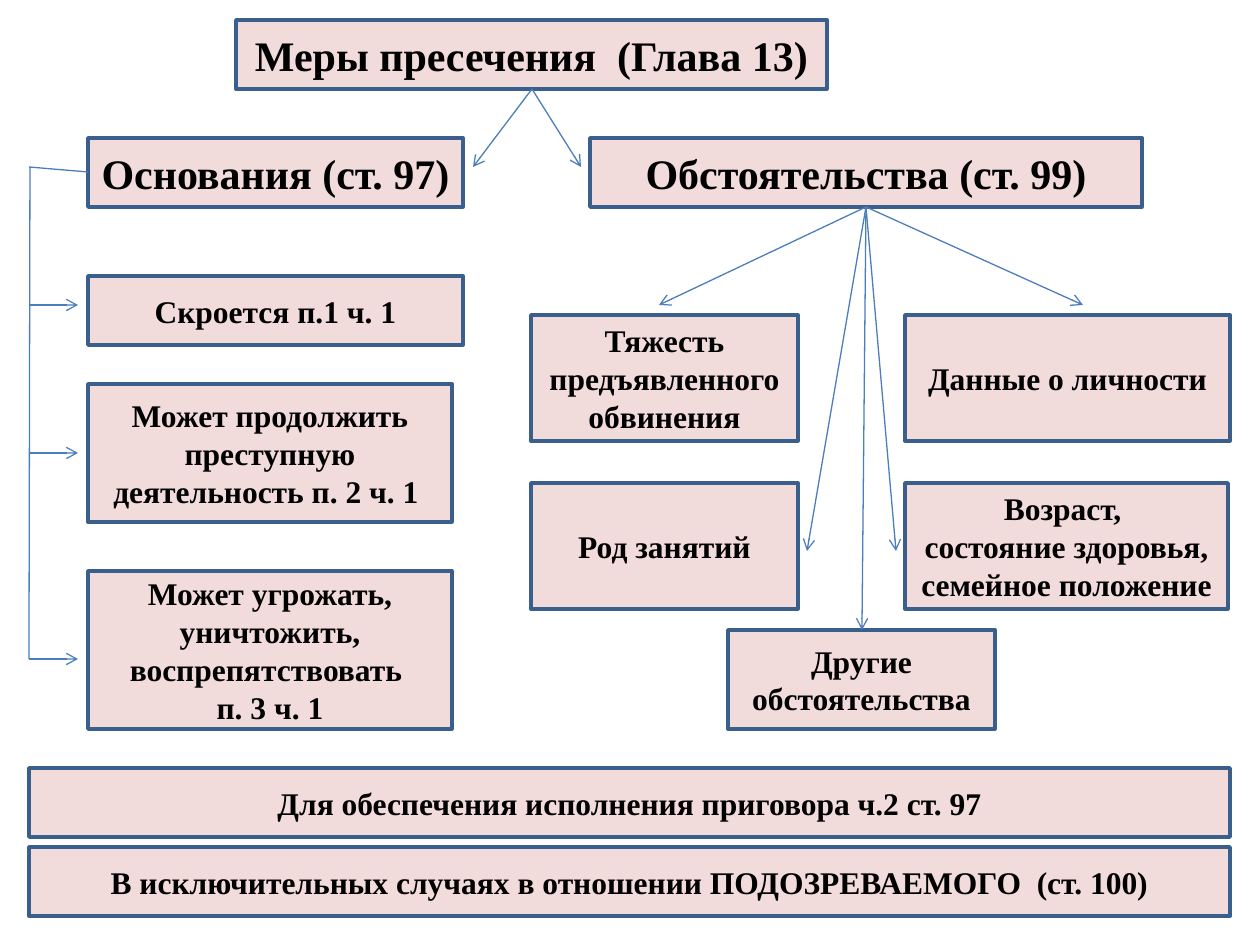
"""Build a one-slide chart of preventive measures."""
from dataclasses import dataclass

from pptx import Presentation, util as u
from pptx.dml.color import RGBColor
from pptx.enum import shapes, text
from pptx.oxml import parse_xml
from pptx.oxml.ns import nsdecls, qn

SCALE = 914400 / 126
COLORS = {"fill": "F2DCDB", "edge": "3A5F8C", "link": "4B7EBC", "ink": "000000"}
FONT = {"name": "Times New Roman", "bold": True}
FRAME = {"word_wrap": True, "auto_size": text.MSO_AUTO_SIZE.NONE,
         "vertical_anchor": text.MSO_ANCHOR.MIDDLE}


@dataclass
class Box:
    words: str
    left: int
    top: int
    width: int
    height: int = 69
    size: int = 18


@dataclass
class Link:
    x1: int
    y1: int
    x2: int
    y2: int
    arrow: bool = True


TITLE = Box("Меры пресечения  (Глава 13)", 236, 20, 591, size=24)
BOXES = [
    Box("Основания (ст. 97)", 88, 138, 375, size=24),
    Box("Обстоятельства (ст. 99)", 590, 138, 552, size=24),
    Box("Скроется п.1 ч. 1", 88, 276, 375),
    Box("Может продолжить преступную деятельность п. 2 ч. 1 ", 88, 384, 364, 138),
    Box("Может угрожать, уничтожить, воспрепятствовать \nп. 3 ч. 1", 88, 571, 364, 158),
    Box("Тяжесть предъявленного обвинения", 531, 315, 267, 126),
    Box("Данные о личности", 905, 315, 325, 126),
    Box("Род занятий", 531, 483, 267, 126),
    Box("Возраст, \nсостояние здоровья,\nсемейное положение", 905, 483, 323, 126),
    Box("Другие обстоятельства", 728, 630, 267, 99),
    Box("Для обеспечения исполнения приговора ч.2 ст. 97", 29, 768, 1201),
    Box("В исключительных случаях в отношении ПОДОЗРЕВАЕМОГО  (ст. 100)", 29, 847, 1201),
]
HEADS = [(581, 167), (473, 167)]
FACTS = [(659, 305), (807, 551), (1083, 305), (896, 551), (862, 630)]
ROWS = [305, 453, 659]
LINKS = [
    *(Link(532, 89, x, y) for x, y in HEADS),
    Link(30, 167, 29, 659, False),
    Link(29, 167, 88, 172, False),
    *(Link(29, y, 78, y) for y in ROWS),
    *(Link(866, 207, x, y) for x, y in FACTS),
]


def px(count: int) -> u.Emu:
    """Turn px into EMU."""
    return u.Emu(round(count * SCALE))


def color(name: str) -> RGBColor:
    """Look up a named colour."""
    return RGBColor.from_string(COLORS[name])


def apply(item: object, form: dict) -> None:
    """Set each attribute in a dict of format values."""
    for key, value in form.items():
        setattr(item, key, value)


def style(shape: object, box: Box) -> None:
    """Fill, outline and label a box."""
    shape.fill.solid()
    shape.fill.fore_color.rgb = color("fill")
    shape.line.color.rgb = color("edge")
    shape.line.width = u.Pt(2)
    frame = shape.text_frame
    frame.text = box.words
    apply(frame, FRAME)
    for para in frame.paragraphs:
        para.alignment = text.PP_ALIGN.CENTER
        for run in para.runs:
            apply(run.font, {**FONT, "size": u.Pt(box.size)})
            run.font.color.rgb = color("ink")


def head(slide: object, box: Box) -> None:
    """Place the title in a rounded frame."""
    shape = slide.shapes.title
    for key in ("left", "top", "width", "height"):
        setattr(shape, key, px(getattr(box, key)))
    shape.element.spPr.append(parse_xml(
        f'<a:prstGeom {nsdecls("a")} prst="roundRect"><a:avLst/></a:prstGeom>'))
    style(shape, box)


def draw(slide: object, box: Box) -> None:
    """Add a rectangular box."""
    place = map(px, (box.left, box.top, box.width, box.height))
    shape = slide.shapes.add_shape(shapes.MSO_SHAPE.RECTANGLE, *place)
    shape.shadow.inherit = False
    style(shape, box)


def join(slide: object, link: Link) -> None:
    """Add a line, with an arrowhead if asked."""
    ends = map(px, (link.x1, link.y1, link.x2, link.y2))
    line = slide.shapes.add_connector(shapes.MSO_CONNECTOR.STRAIGHT, *ends)
    line.line.color.rgb = color("link")
    line.line.width = u.Pt(0.75)
    props = line.element.spPr
    if link.arrow:
        props.find(qn("a:ln")).append(
            parse_xml(f'<a:tailEnd {nsdecls("a")} type="arrow"/>'))
    props.append(parse_xml(f'<a:effectLst {nsdecls("a")}/>'))


def main() -> None:
    """Build and save the slide."""
    deck = Presentation()
    apply(deck, {"slide_width": u.Inches(10), "slide_height": u.Inches(7.5)})
    slide = deck.slides.add_slide(deck.slide_layouts[5])
    head(slide, TITLE)
    for box in BOXES:
        draw(slide, box)
    for link in LINKS:
        join(slide, link)
    deck.save("out.pptx")


if __name__ == "__main__":
    main()
